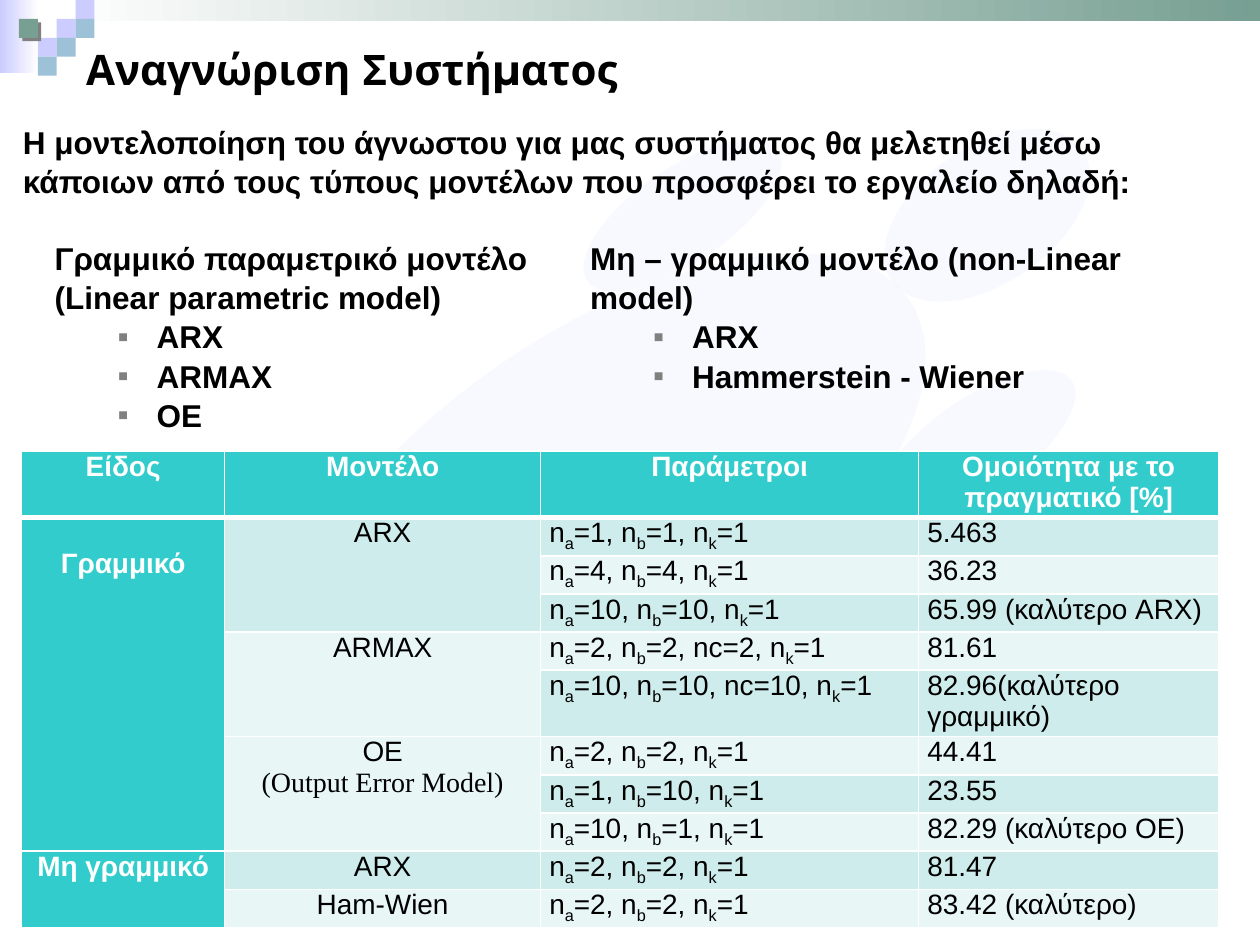
from dataclasses import dataclass
from lxml import etree
from pptx import Presentation
from pptx.dml.color import RGBColor
from pptx.enum.shapes import MSO_SHAPE
from pptx.enum.text import MSO_ANCHOR, MSO_AUTO_SIZE, PP_ALIGN
from pptx.oxml.ns import qn
from pptx.util import Pt

RECTANGLE, OVAL = MSO_SHAPE.RECTANGLE, MSO_SHAPE.OVAL
TOP, MIDDLE = MSO_ANCHOR.TOP, MSO_ANCHOR.MIDDLE
LEFT, CENTER, JUSTIFY = PP_ALIGN.LEFT, PP_ALIGN.CENTER, PP_ALIGN.JUSTIFY
FIXED_SIZE = MSO_AUTO_SIZE.NONE


@dataclass(frozen=True)
class Theme:
    black: str = "000000"
    white: str = "FFFFFF"
    lilac: str = "CCCCFF"
    pale: str = "EBEBFF"
    blue: str = "9DC2D7"
    green: str = "779F92"
    grey: str = "808080"
    header: str = "33CCCC"
    bands: tuple = ("E8F6F6", "CEECEC")
    font: str = "Arial"
    serif: str = "Times New Roman"
    title_font: str = "Montserrat"
    title_size: int = 24
    body_size: int = 18
    table_size: int = 16


theme = Theme()


def add_run(paragraph, text, size, color=theme.black, bold=False, font=theme.font):
    run = paragraph.add_run()
    run.text = text
    run.font.name, run.font.size, run.font.bold = font, Pt(size), bold
    run.font.color.rgb = RGBColor.from_string(color)
    return run


def add_xml(parent, tag, color=None, **attributes):
    element = etree.SubElement(parent, qn(tag), attributes)
    if color:
        etree.SubElement(element, qn("a:srgbClr"), val=color)
    return element


presentation = Presentation()
presentation.slide_width, presentation.slide_height = Pt(720), Pt(540)
slide = presentation.slides.add_slide(presentation.slide_layouts[3])
title, left_list, right_list = slide.placeholders

# Background decoration: gradient bars, squares on a grid, pale ellipses
STEP = 10.8
decor = [
    (RECTANGLE, 0, 0, 22.3, 41.8, (theme.lilac, theme.white)),
    (RECTANGLE, 32.4, 0, 687.6, 12.2, (theme.white, theme.green)),
]
squares = [
    (3, 1, theme.lilac), (4, 0, theme.lilac), (4, 1, theme.blue), (2, 2, theme.lilac),
    (1, 1, theme.green), (3, 2, theme.blue), (2, 3, theme.blue),
]
decor += [(RECTANGLE, column * STEP, row * STEP, STEP, STEP, (color,))
          for column, row, color in squares]
ellipses = [
    (131, 190, 426, 204), (174, 450, 132, 54), (42, 348, 132, 54), (324, 96, 132, 54),
    (492, 228, 132, 54), (498, 84, 132, 78), (144, 415.5, 30, 18),
]
decor += [(OVAL, *box, (theme.pale,)) for box in ellipses]

group = slide.shapes.add_group_shape()
for kind, left, top, width, height, colors in decor:
    shape = group.shapes.add_shape(kind, Pt(left), Pt(top), Pt(width), Pt(height))
    shape.shadow.inherit = False
    shape.line.fill.background()
    if len(colors) == 2:
        shape.fill.gradient()
        shape.fill.gradient_angle = 0
        for stop, color in zip(shape.fill.gradient_stops, colors):
            stop.color.rgb = RGBColor.from_string(color)
    else:
        shape.fill.solid()
        shape.fill.fore_color.rgb = RGBColor.from_string(colors[0])
    if kind == OVAL:
        shape.rotation = 325.5
        fill_color = shape.element.spPr.find(qn("a:solidFill"))[0]
        add_xml(fill_color, "a:alpha", val="30000")
    elif colors == (theme.green,):
        effects = shape.element.spPr.find(qn("a:effectLst"))
        add_xml(effects, "a:outerShdw", theme.grey, dist=str(Pt(2.8)), dir="2700000")
title.element.addprevious(group.element)

# Title
title.left, title.top, title.width, title.height = Pt(42), Pt(18), Pt(672), Pt(42)
title.text_frame.vertical_anchor = MIDDLE
title.text_frame.auto_size = FIXED_SIZE
paragraph = title.text_frame.paragraphs[0]
paragraph.alignment = LEFT
add_run(paragraph, "Αναγνώριση Συστήματος", theme.title_size, bold=True, font=theme.title_font)

# Introduction and the two model lists
intro = slide.shapes.add_textbox(Pt(6), Pt(66), Pt(696), Pt(48))
texts = [
    (intro, (6, 66, 696, 48), [
        "Η μοντελοποίηση του άγνωστου για μας συστήματος θα μελετηθεί μέσω "
        "κάποιων από τους τύπους μοντέλων που προσφέρει το εργαλείο δηλαδή:"]),
    (left_list, (24, 132, 294, 116.6), [
        "Γραμμικό παραμετρικό μοντέλο (Linear parametric model)", "ARX", "ARMAX", "OE"]),
    (right_list, (330, 132, 360, 94.3), [
        "Μη – γραμμικό μοντέλο (non-Linear model)", "ARX", "Hammerstein - Wiener"]),
]
for shape, box, lines in texts:
    shape.left, shape.top, shape.width, shape.height = map(Pt, box)
    frame = shape.text_frame
    frame.word_wrap, frame.auto_size, frame.vertical_anchor = True, FIXED_SIZE, TOP
    for index, line in enumerate(lines):
        paragraph = frame.add_paragraph() if index else frame.paragraphs[0]
        properties = paragraph._p.get_or_add_pPr()
        if index:
            paragraph.level = 1
            properties.set("marL", str(Pt(58.3)))
            properties.set("indent", str(Pt(-22.3)))
            add_xml(properties, "a:buClr", theme.grey)
            add_xml(properties, "a:buChar", char="▪")
        else:
            properties.set("marL", "0")
            properties.set("indent", "0")
            add_xml(properties, "a:buNone")
        paragraph.space_before = Pt(0)
        paragraph.line_spacing = 1.04
        add_run(paragraph, line, theme.body_size, bold=True)

# Results table; "_" marks the next letter as a subscript
rows = [
    ("Είδος", "Μοντέλο", "Παράμετροι", "Ομοιότητα με το πραγματικό [%]"),
    ("Γραμμικό", "ARX", "n_a=1, n_b=1, n_k=1", "5.463"),
    ("", "", "n_a=4, n_b=4, n_k=1", "36.23"),
    ("", "", "n_a=10, n_b=10, n_k=1", "65.99 (καλύτερο ARX)"),
    ("", "ARMAX", "n_a=2, n_b=2, nc=2, n_k=1", "81.61"),
    ("", "", "n_a=10, n_b=10, nc=10, n_k=1", "82.96(καλύτερο γραμμικό)"),
    ("", "OE\n(Output Error Model)", "n_a=2, n_b=2, n_k=1", "44.41"),
    ("", "", "n_a=1, n_b=10, n_k=1", "23.55"),
    ("", "", "n_a=10, n_b=1, n_k=1", "82.29 (καλύτερο ΟΕ)"),
    ("Μη γραμμικό", "ARX", "n_a=2, n_b=2, n_k=1", "81.47"),
    ("", "Ham-Wien", "n_a=2, n_b=2, n_k=1", "83.42 (καλύτερο)"),
]
widths = (116, 180.6, 216, 171.4)
tall_rows = (0, 5)
merges = [(1, 8, 0), (9, 10, 0), (1, 3, 1), (4, 5, 1), (6, 8, 1)]
table = slide.shapes.add_table(
    len(rows), len(widths), Pt(12.4), Pt(257.8), Pt(sum(widths)), Pt(272)).table
for column, width in zip(table.columns, widths):
    column.width = Pt(width)
for index, row in enumerate(table.rows):
    row.height = Pt(38 if index in tall_rows else 21.8)

for row_index, values in enumerate(rows):
    for column_index, value in enumerate(values):
        cell = table.cell(row_index, column_index)
        heading = row_index == 0 or column_index == 0
        cell.margin_left = cell.margin_right = Pt(5)
        cell.margin_top = cell.margin_bottom = Pt(0)
        for side in "LRTB":
            thick = (row_index, side) in ((0, "B"), (1, "T"))
            border = add_xml(cell._tc.get_or_add_tcPr(), f"a:ln{side}", w=str(Pt(3 if thick else 1)))
            add_xml(border, "a:solidFill", theme.white)
        cell.fill.solid()
        cell.fill.fore_color.rgb = RGBColor.from_string(
            theme.header if heading else theme.bands[row_index % 2])
        for index, line in enumerate(value.split("\n") if value else []):
            frame = cell.text_frame
            paragraph = frame.add_paragraph() if index else frame.paragraphs[0]
            paragraph.alignment = CENTER if heading or column_index == 1 else JUSTIFY
            style = dict(size=theme.table_size, bold=heading,
                         color=theme.white if heading else theme.black,
                         font=theme.serif if index else theme.font)
            first, *others = line.split("_")
            add_run(paragraph, first, **style)
            for part in others:
                subscript = add_run(paragraph, part[0], **style)
                subscript._r.get_or_add_rPr().set("baseline", "-25000")
                add_run(paragraph, part[1:], **style)
table.cell(1, 0).margin_top = Pt(17.8)
for first_row, last_row, column_index in merges:
    table.cell(first_row, column_index).merge(table.cell(last_row, column_index))

presentation.save("out.pptx")
